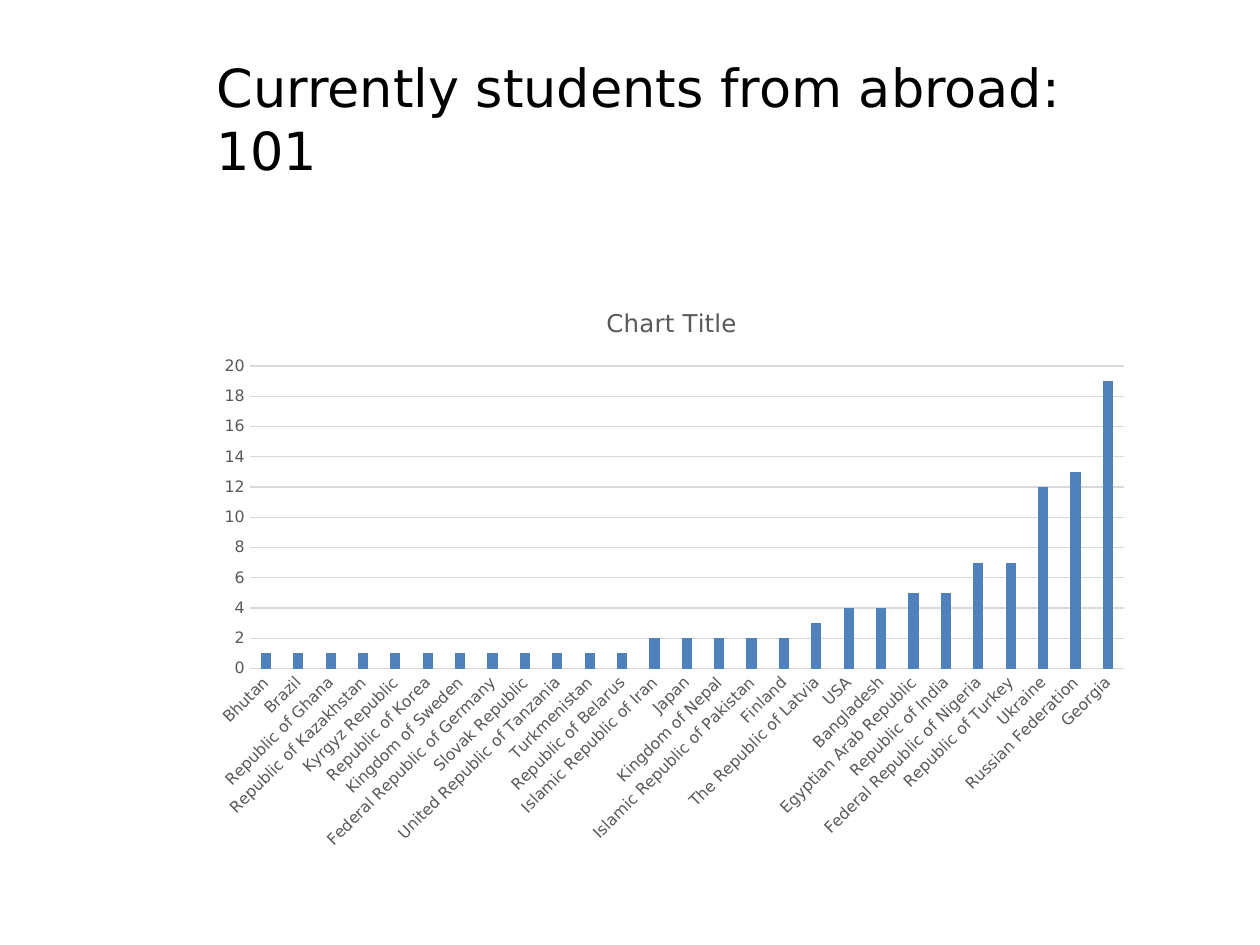
"""Build a slide with a column chart of students from abroad by country."""
import pptx
import pptx.chart.data
import pptx.dml.color
import pptx.enum.chart
import pptx.enum.text
import pptx.util

Pt = pptx.util.Pt
FONT = "DejaVu Sans"
COLORS = {"title": "000000", "label": "595959", "grid": "D9D9D9", "bar": "4F81BD"}
STUDENTS = {
    "Bhutan": 1, "Brazil": 1, "Republic of Ghana": 1, "Republic of Kazakhstan": 1,
    "Kyrgyz Republic": 1, "Republic of Korea": 1, "Kingdom of Sweden": 1,
    "Federal Republic of Germany": 1, "Slovak Republic": 1,
    "United Republic of Tanzania": 1, "Turkmenistan": 1, "Republic of Belarus": 1,
    "Islamic Republic of Iran": 2, "Japan": 2, "Kingdom of Nepal": 2,
    "Islamic Republic of Pakistan": 2, "Finland": 2, "The Republic of Latvia": 3,
    "USA": 4, "Bangladesh": 4, "Egyptian Arab Republic": 5, "Republic of India": 5,
    "Federal Republic of Nigeria": 7, "Republic of Turkey": 7, "Ukraine": 12,
    "Russian Federation": 13, "Georgia": 19,
}


def style_font(font, size, color):
    font.name = FONT
    font.size = Pt(size)
    font.bold = False
    font.color.rgb = pptx.dml.color.RGBColor.from_string(COLORS[color])


def style_line(line):
    line.width = Pt(0.75)
    line.color.rgb = pptx.dml.color.RGBColor.from_string(COLORS["grid"])


deck = pptx.Presentation()
deck.slide_width, deck.slide_height = Pt(720), Pt(540)
page = deck.slides.add_slide(deck.slide_layouts[5])

title = page.shapes.title
title.left, title.top, title.width, title.height = Pt(116.6), Pt(33.8), Pt(535.7), Pt(67.7)
title.text_frame.text = "Currently students from abroad: 101"
title.text_frame.vertical_anchor = pptx.enum.text.MSO_ANCHOR.MIDDLE
title.text_frame.auto_size = pptx.enum.text.MSO_AUTO_SIZE.NONE
heading = title.text_frame.paragraphs[0]
heading.alignment = pptx.enum.text.PP_ALIGN.LEFT
style_font(heading.font, 30, "title")

data = pptx.chart.data.CategoryChartData()
data.categories = list(STUDENTS)
data.add_series("Series 1", list(STUDENTS.values()))
chart = page.shapes.add_chart(
    pptx.enum.chart.XL_CHART_TYPE.COLUMN_CLUSTERED,
    Pt(114.5), Pt(162), Pt(538.6), Pt(329.8), data,
).chart
style_font(chart.font, 10, "title")
chart.has_legend = False
chart.has_title = True
chart.chart_title.include_in_layout = False
chart.chart_title.text_frame.text = "Chart Title"
style_font(chart.chart_title.text_frame.paragraphs[0].font, 14, "label")

plot = chart.plots[0]
plot.gap_width = 219
plot.overlap = -27
plot.vary_by_categories = False
fill = plot.series[0].format.fill
fill.solid()
fill.fore_color.rgb = pptx.dml.color.RGBColor.from_string(COLORS["bar"])

for axis in (chart.category_axis, chart.value_axis):
    axis.major_tick_mark = axis.minor_tick_mark = pptx.enum.chart.XL_TICK_MARK.NONE
    style_font(axis.tick_labels.font, 9, "label")

countries, counts = chart.category_axis, chart.value_axis
style_line(countries.format.line)
countries._element.txPr.bodyPr.set("rot", "-2700000")
counts.minimum_scale, counts.maximum_scale, counts.major_unit = 0, 20, 2
counts.format.line.fill.background()
counts.has_major_gridlines = True
style_line(counts.major_gridlines.format.line)

deck.save("out.pptx")
